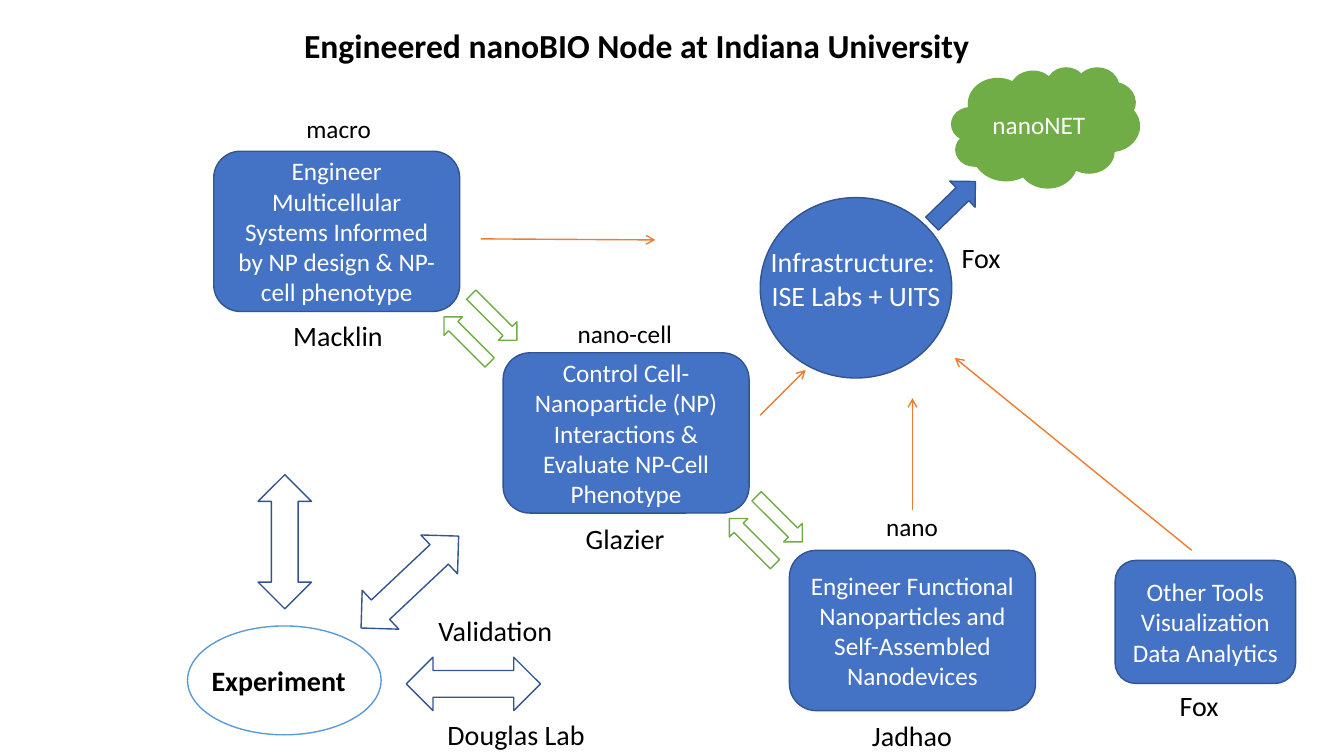
import pptx
import pptx.dml.color
import pptx.enum.shapes
import pptx.enum.text
import pptx.util
from lxml import etree

RGB = pptx.dml.color.RGBColor
KIND = pptx.enum.shapes.MSO_SHAPE
ALIGN = pptx.enum.text.PP_ALIGN
ANCHOR = pptx.enum.text.MSO_ANCHOR
FIT = pptx.enum.text.MSO_AUTO_SIZE

BLUE = RGB(0x44, 0x72, 0xC4)
NAVY = RGB(0x32, 0x54, 0x91)
SKY = RGB(0x5B, 0x9B, 0xD5)
GREEN = RGB(0x70, 0xAD, 0x47)
ORANGE = RGB(0xED, 0x7D, 0x31)
WHITE = RGB(255, 255, 255)
BLACK = RGB(0, 0, 0)

PX = 9144  # 100 px to the inch
FONT = "Calibri"

# Each text is a list of paragraphs, each paragraph a list of lines.
TITLE = [["Engineered nanoBIO Node at Indiana University"]]
CLOUD = [["nanoNET"]]
HUB = [["Infrastructure: "], ["ISE Labs + UITS"]]
TRIAL = [["Experiment"]]

STAGES = [
    ((212, 150, 244, 159),
     [["Engineer Multicellular Systems Informed by NP design & NP-cell phenotype"]]),
    ((499, 350, 244, 159),
     [["Control Cell-Nanoparticle (NP) Interactions & Evaluate NP-Cell Phenotype"]]),
    ((783, 546, 244, 159),
     [["Engineer Functional Nanoparticles and Self-Assembled Nanodevices"]]),
    ((1106, 556, 179, 122),
     [["Other Tools", "Visualization"], ["Data Analytics"]]),
]

# Text, left, top, width
SCALES = [("macro", 294, 108, 85), ("nano-cell", 563, 311, 115), ("nano", 869, 502, 72)]
NAMES = [
    ("Macklin", 281, 311, 110),
    ("Glazier", 571, 512, 99),
    ("Jadhao", 855, 708, 100),
    ("Fox", 944, 234, 59),
    ("Fox", 1160, 678, 59),
    ("Validation", 425, 604, 134),
    ("Douglas Lab", 434, 707, 157),
]

# Start and end of the thin arrows
FLOWS = [
    ((477, 237), (650, 238)),
    ((754, 412), (799, 367)),
    ((905, 506), (905, 395)),
    ((1182, 546), (947, 355)),
]

# Left and top of each down arrow, with its return arrow set beside it
SWAPS = [(458, 302), (741, 502)]
BACK = (-27, 22)

# Left, top and turn of the two-way arrows
LINKS = [(256, 471, 0), (380, 511, 46.7), (443, 612, 90)]


def write(shape, paras, size, color, bold=False, align=ALIGN.CENTER):
    frame = shape.text_frame
    for i, lines in enumerate(paras):
        para = frame.paragraphs[0] if i == 0 else frame.add_paragraph()
        para.alignment = align
        for j, line in enumerate(lines):
            if j:
                para.add_line_break()
            run = para.add_run()
            run.text = line
            run.font.name = FONT
            run.font.size = pptx.util.Pt(size)
            run.font.bold = bold
            run.font.color.rgb = color


def draw(shapes, kind, box, fill, line, turn=0):
    shape = shapes.add_shape(kind, *(n * PX for n in box))
    shape.shadow.inherit = False
    shape.rotation = turn
    if fill is None:
        shape.fill.background()
    else:
        shape.fill.solid()
        shape.fill.fore_color.rgb = fill
    shape.line.color.rgb = line
    shape.line.width = pptx.util.Pt(1)
    return shape


def block(shapes, kind, box, fill, line, paras):
    """Draw a shape with white text in its middle."""
    shape = draw(shapes, kind, box, fill, line)
    shape.text_frame.word_wrap = True
    shape.text_frame.vertical_anchor = ANCHOR.MIDDLE
    write(shape, paras, 18, WHITE)


def label(shapes, box, paras, size, color=BLACK, bold=False,
          align=ALIGN.LEFT, wrap=False):
    shape = shapes.add_textbox(*(n * PX for n in box))
    shape.text_frame.word_wrap = wrap
    shape.text_frame.auto_size = FIT.SHAPE_TO_FIT_TEXT
    write(shape, paras, size, color, bold, align)


def flow(shapes, start, end):
    """Draw a thin arrow."""
    line = shapes.add_connector(pptx.enum.shapes.MSO_CONNECTOR.STRAIGHT,
                                *(n * PX for n in start + end))
    line.line.color.rgb = ORANGE
    line.line.width = pptx.util.Pt(1)
    ns = pptx.oxml.ns.qn
    etree.SubElement(line.line._get_or_add_ln(), ns("a:tailEnd"), type="arrow")
    etree.SubElement(line._element.spPr, ns("a:effectLst"))


def main():
    deck = pptx.Presentation()
    deck.slide_width, deck.slide_height = 1333 * PX, 750 * PX
    shapes = deck.slides.add_slide(deck.slide_layouts[6]).shapes

    label(shapes, (282, 20, 699, 50), TITLE, 24, bold=True,
          align=ALIGN.CENTER, wrap=True)
    block(shapes, KIND.CLOUD, (944, 67, 186, 119), GREEN, GREEN, CLOUD)
    for box, paras in STAGES:
        block(shapes, KIND.ROUNDED_RECTANGLE, box, BLUE, NAVY, paras)

    trial = shapes.add_group_shape().shapes
    draw(trial, KIND.OVAL, (186, 621, 192, 108), WHITE, SKY)
    label(trial, (200, 653, 154, 44), TRIAL, 20, bold=True, wrap=True)

    hub = shapes.add_group_shape().shapes
    draw(hub, KIND.OVAL, (754, 196, 190, 179), BLUE, NAVY)
    label(hub, (740, 238, 218, 77), HUB, 20, WHITE, align=ALIGN.CENTER, wrap=True)

    for group, size, high in ((SCALES, 18, 40), (NAMES, 20, 44)):
        for text, left, top, wide in group:
            label(shapes, (left, top, wide, high), [[text]], size)

    for start, end in FLOWS:
        flow(shapes, start, end)

    for left, top in SWAPS:
        pair = shapes.add_group_shape().shapes
        for (dx, dy), turn in (((0, 0), 45), (BACK, 225)):
            draw(pair, KIND.RIGHT_ARROW, (left + dx, top + dy, 64, 26),
                 WHITE, GREEN, turn)

    draw(shapes, KIND.RIGHT_ARROW, (916, 183, 60, 36), BLUE, NAVY, 315.8)
    for left, top, turn in LINKS:
        draw(shapes, KIND.UP_DOWN_ARROW, (left, top, 53, 133), None, NAVY, turn)

    deck.save("out.pptx")


if __name__ == "__main__":
    main()
